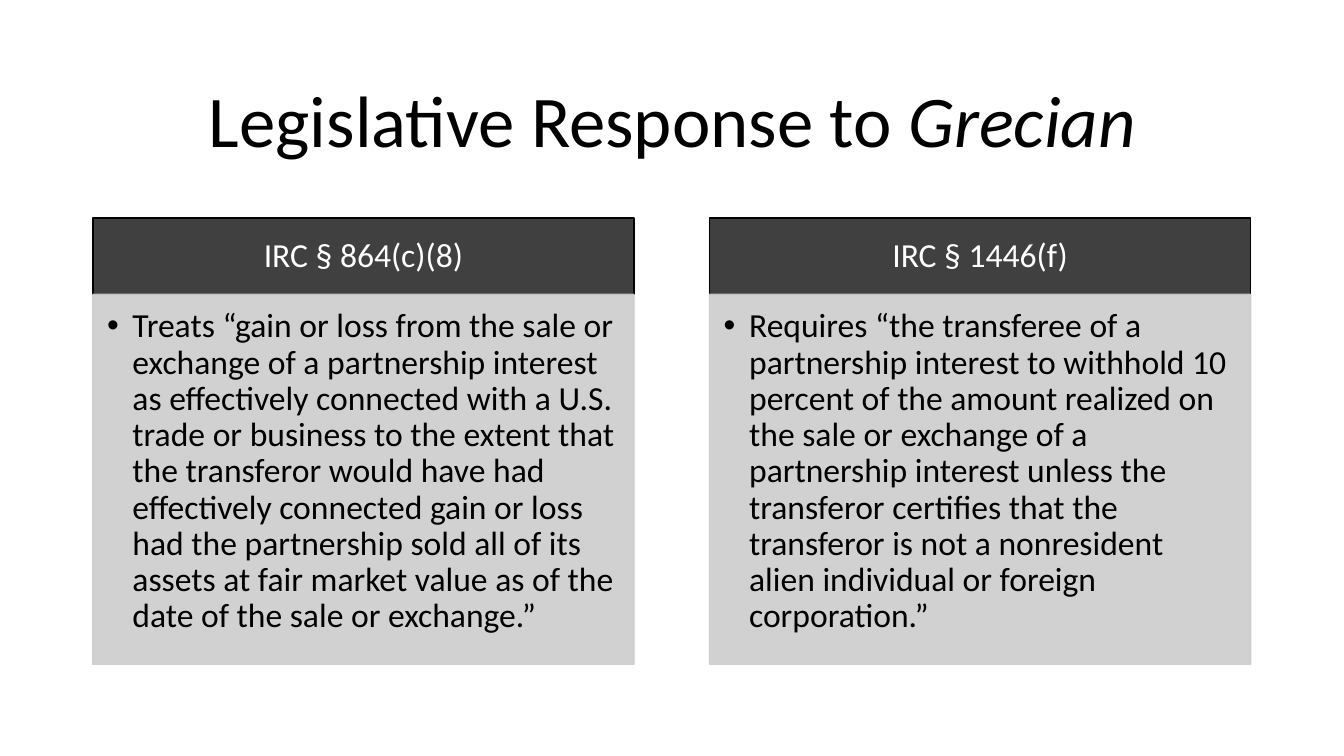
from dataclasses import dataclass

from lxml import etree
from pptx import Presentation
from pptx import util as u
from pptx.dml.color import RGBColor
from pptx.enum import shapes, text
from pptx.oxml.ns import qn


@dataclass
class Theme:
    font: str = "Calibri"
    ink: str = "000000"
    white: str = "FFFFFF"
    head: str = "404040"
    pale: str = "CCCCCC"
    big: int = 52
    small: int = 24
    clear: int = 90


class Deck:
    def __init__(self, theme):
        self.theme = theme
        self.file = Presentation()
        self.file.slide_width = u.Cm(33.87)
        self.file.slide_height = u.Cm(19.05)
        self.slide = self.file.slides.add_slide(self.file.slide_layouts[6])

    def label(self, shape, runs, size, color, pads, anchor, align):
        sides = ("left", "top", "right", "bottom")
        look = {f"margin_{side}": u.Cm(pad) for side, pad in zip(sides, pads)}
        look |= {"word_wrap": True, "vertical_anchor": anchor}
        frame = shape.text_frame
        for key, value in look.items():
            setattr(frame, key, value)
        para = frame.paragraphs[0]
        para.alignment = align
        para.line_spacing = 0.9
        for words, slant in runs:
            run = para.add_run()
            run.text = words
            style = {"name": self.theme.font, "size": u.Pt(size), "italic": slant}
            for key, value in style.items():
                setattr(run.font, key, value)
            run.font.color.rgb = RGBColor.from_string(color)
        return para

    def title(self, box, runs):
        shape = self.slide.shapes.add_textbox(*map(u.Cm, box))
        self.label(shape, runs, self.theme.big, self.theme.ink,
                   (0.25, 0.13, 0.25, 0.13), text.MSO_ANCHOR.MIDDLE, text.PP_ALIGN.CENTER)

    def block(self, box, fill, line):
        shape = self.slide.shapes.add_shape(shapes.MSO_SHAPE.RECTANGLE, *map(u.Cm, box))
        shape.shadow.inherit = False
        shape.fill.solid()
        shape.fill.fore_color.rgb = RGBColor.from_string(fill)
        shape.line.color.rgb = RGBColor.from_string(line)
        shape.line.width = u.Pt(1)
        return shape

    def head(self, box, words):
        shape = self.block(box, self.theme.head, self.theme.ink)
        self.label(shape, [(words, False)], self.theme.small, self.theme.white,
                   (0.48, 0.28, 0.48, 0.28), text.MSO_ANCHOR.MIDDLE, text.PP_ALIGN.CENTER)

    def body(self, box, words):
        shape = self.block(box, self.theme.pale, self.theme.pale)
        for color in shape._element.spPr.iter(qn("a:srgbClr")):
            etree.SubElement(color, qn("a:alpha"), val=str(self.theme.clear * 1000))
        para = self.label(shape, [(words, False)], self.theme.small, self.theme.ink,
                          (0.36, 0.36, 0.48, 0.53), text.MSO_ANCHOR.TOP, text.PP_ALIGN.LEFT)
        para.level = 1
        props = para._p.get_or_add_pPr()
        dent = u.Cm(0.64)
        for key, value in {"marL": dent, "indent": -dent}.items():
            props.set(key, str(value))
        etree.SubElement(props, qn("a:buFont"), typeface="Arial")
        etree.SubElement(props, qn("a:buChar"), char="•")


def main():
    deck = Deck(Theme())
    left, top, width, step = 2.34, 5.49, 13.64, 15.54
    tall, deep = 1.93, 9.32
    deck.title((left, 1.55, 29.21, 3.15),
               [("Legislative Response to ", False), ("Grecian", True)])
    laws = {
        "IRC § 864(c)(8)":
            "Treats “gain or loss from the sale or exchange of a partnership interest "
            "as effectively connected with a U.S. trade or business to the extent that "
            "the transferor would have had effectively connected gain or loss had the "
            "partnership sold all of its assets at fair market value as of the date of "
            "the sale or exchange.”",
        "IRC § 1446(f)":
            "Requires “the transferee of a partnership interest to withhold 10 percent "
            "of the amount realized on the sale or exchange of a partnership interest "
            "unless the transferor certifies that the transferor is not a nonresident "
            "alien individual or foreign corporation.”",
    }
    for col, (name, rule) in enumerate(laws.items()):
        x = left + col * step
        deck.head((x, top, width, tall), name)
        deck.body((x, top + tall, width, deep), rule)
    deck.file.save("out.pptx")


if __name__ == "__main__":
    main()
